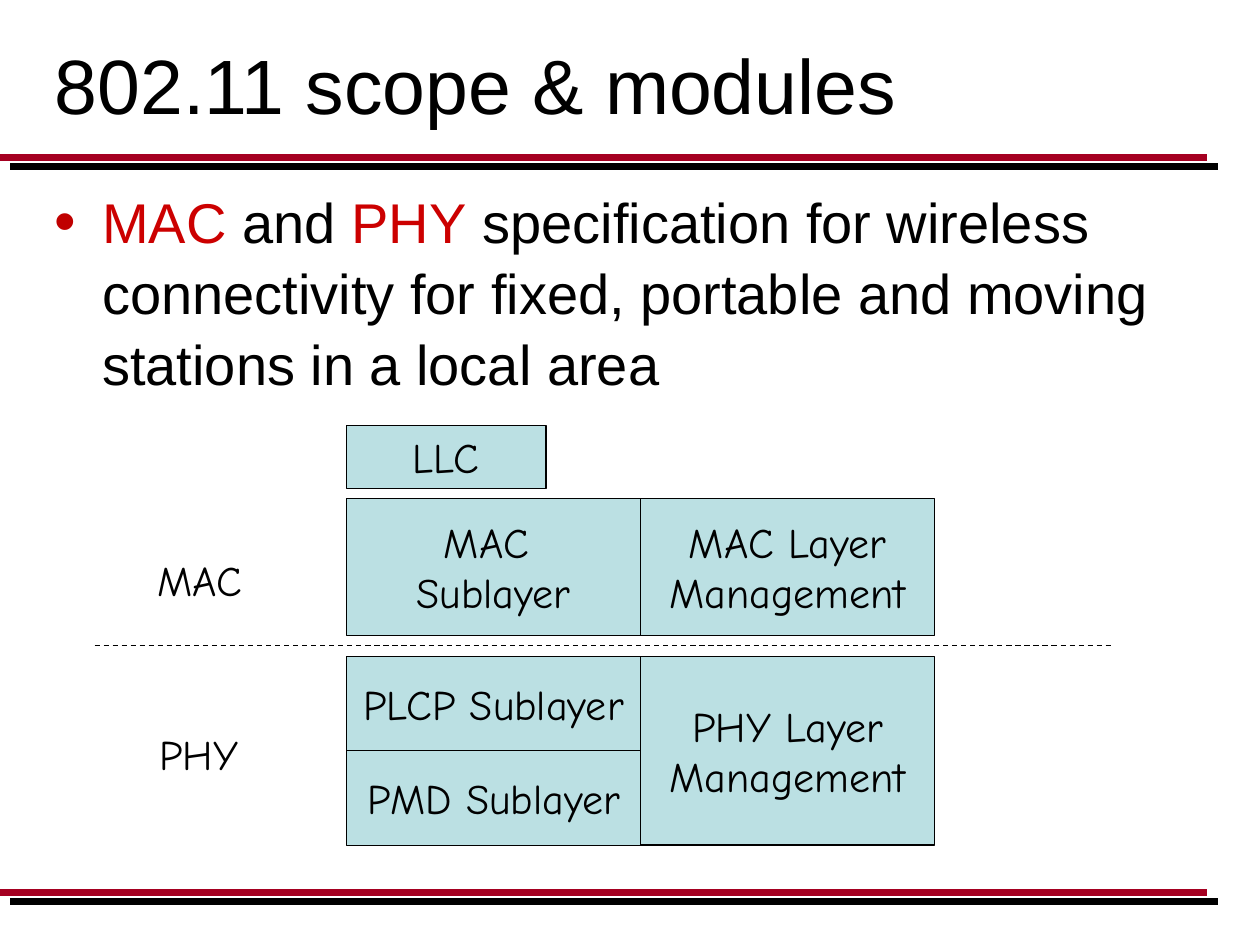
"""Build the slide on 802.11 scope and modules."""
from lxml.etree import SubElement
from pptx import Presentation
from pptx.dml.color import RGBColor
from pptx.enum.dml import MSO_LINE_DASH_STYLE as Dash
from pptx.enum.shapes import MSO_CONNECTOR as Connector, MSO_SHAPE as Shape
from pptx.enum.text import MSO_ANCHOR as Anchor, MSO_AUTO_SIZE as Fit, PP_ALIGN as Align
from pptx.oxml.ns import qn
from pptx.util import Inches, Pt

BLACK = RGBColor(0x00, 0x00, 0x00)
RULE_RED = RGBColor(0xA5, 0x00, 0x21)
TERM_RED = RGBColor(0xCC, 0x00, 0x00)
BULLET_RED = RGBColor(0xC0, 0x00, 0x00)
PALE_BLUE = RGBColor(0xBB, 0xE0, 0xE3)
BODY_FONT, DIAGRAM_FONT = "Arial", "Comic Neue"

COLUMNS, ROWS = 120, 90
WIDTH, HEIGHT = Inches(10), Inches(7.5)
LEFT, MIDDLE, MODULE_WIDTH = 33, 61, 28
MAC_TOP, PHY_TOP, HALF = 47.5, 62.5, 9

MODULES = [
    (LEFT, MAC_TOP, MODULE_WIDTH, 13, ["MAC ", "Sublayer"]),
    (MIDDLE, MAC_TOP, MODULE_WIDTH, 13, ["MAC Layer", "Management"]),
    (LEFT, PHY_TOP, MODULE_WIDTH, HALF, ["PLCP Sublayer"]),
    (LEFT, PHY_TOP + HALF, MODULE_WIDTH, HALF, ["PMD Sublayer"]),
    (MIDDLE, PHY_TOP, MODULE_WIDTH, 2 * HALF, ["PHY Layer", "Management"]),
    (LEFT, 40.5, 19, 6, ["LLC"]),
]
LABELS = [(13.8, 52.2, 11.3, 6, "MAC"), (14, 68.75, 10.1, 6, "PHY")]
STATEMENT = [
    ("MAC", TERM_RED),
    (" and ", BLACK),
    ("PHY", TERM_RED),
    (" specification for wireless connectivity for fixed, portable and moving "
     "stations in a local area", BLACK),
]


def across(columns):
    """Turn grid columns into a length."""
    return round(WIDTH * columns / COLUMNS)


def down(rows):
    """Turn grid rows into a length."""
    return round(HEIGHT * rows / ROWS)


def area(left, top, width, height):
    """Turn a grid area into lengths."""
    return across(left), down(top), across(width), down(height)


def add_span(para, text, *, size=24, font=DIAGRAM_FONT, color=BLACK):
    """Add formatted text to a paragraph."""
    span = para.add_run()
    span.text = text
    span.font.size = Pt(size)
    span.font.name = font
    span.font.color.rgb = color


def add_line(slide, left, right, row, color, weight, dash=None):
    """Draw a level line without shadow."""
    line = slide.shapes.add_connector(
        Connector.STRAIGHT, across(left), down(row), across(right), down(row))
    line.line.color.rgb = color
    line.line.width = Pt(weight)
    if dash is not None:
        line.line.dash_style = dash
    SubElement(line._element.spPr, qn("a:effectLst"))


def add_double_rule(slide, row):
    """Draw a red rule over its offset black one."""
    add_line(slide, 1, 116, row + 0.84, BLACK, 4)
    add_line(slide, 0, 115, row, RULE_RED, 4)


def add_title(slide, text):
    """Place and fill the title."""
    title = slide.shapes.title
    title.left, title.top, title.width, title.height = area(4, 0, 110, 16)
    frame = title.text_frame
    frame.auto_size = Fit.NONE
    frame.vertical_anchor = Anchor.MIDDLE
    para = frame.paragraphs[0]
    para.alignment = Align.LEFT
    add_span(para, text, size=44, font=BODY_FONT)


def add_bullet(para):
    """Give a paragraph a hanging red bullet."""
    props = para._p.get_or_add_pPr()
    props.set("marL", str(Inches(0.38)))
    props.set("indent", str(-Inches(0.38)))
    color = SubElement(props, qn("a:buClr"))
    SubElement(color, qn("a:srgbClr"), val=str(BULLET_RED))
    SubElement(props, qn("a:buSzPct"), val="110000")
    SubElement(props, qn("a:buFont"), typeface=BODY_FONT)
    SubElement(props, qn("a:buChar"), char="•")


def add_statement(slide, spans):
    """Add the bulleted statement."""
    frame = slide.shapes.add_textbox(*area(4, 17, 110, 67)).text_frame
    frame.word_wrap = True
    para = frame.paragraphs[0]
    para.line_spacing = 1.05
    para.space_before = Pt(1)
    add_bullet(para)
    for text, color in spans:
        add_span(para, text, size=32, font=BODY_FONT, color=color)


def add_module(slide, left, top, width, height, lines):
    """Add a module box with centred lines."""
    box = slide.shapes.add_shape(Shape.RECTANGLE, *area(left, top, width, height))
    box.shadow.inherit = False
    box.fill.solid()
    box.fill.fore_color.rgb = PALE_BLUE
    box.line.color.rgb = BLACK
    box.line.width = Pt(0.75)
    frame = box.text_frame
    frame.word_wrap = False
    frame.vertical_anchor = Anchor.MIDDLE
    for index, text in enumerate(lines):
        para = frame.add_paragraph() if index else frame.paragraphs[0]
        para.alignment = Align.CENTER
        add_span(para, text)


def add_label(slide, left, top, width, height, text):
    """Add a layer name beside the modules."""
    frame = slide.shapes.add_textbox(*area(left, top, width, height)).text_frame
    frame.word_wrap = False
    frame.auto_size = Fit.SHAPE_TO_FIT_TEXT
    add_span(frame.paragraphs[0], text)


def main():
    """Build and save the deck."""
    deck = Presentation()
    deck.slide_width, deck.slide_height = WIDTH, HEIGHT
    page = deck.slides.add_slide(deck.slide_layouts[5])
    for row in (15, 85):
        add_double_rule(page, row)
    add_title(page, "802.11 scope & modules")
    add_statement(page, STATEMENT)
    for module in MODULES:
        add_module(page, *module)
    add_line(page, 9, 106, 61.5, BLACK, 0.75, Dash.DASH)
    for label in LABELS:
        add_label(page, *label)
    deck.save("out.pptx")


if __name__ == "__main__":
    main()
